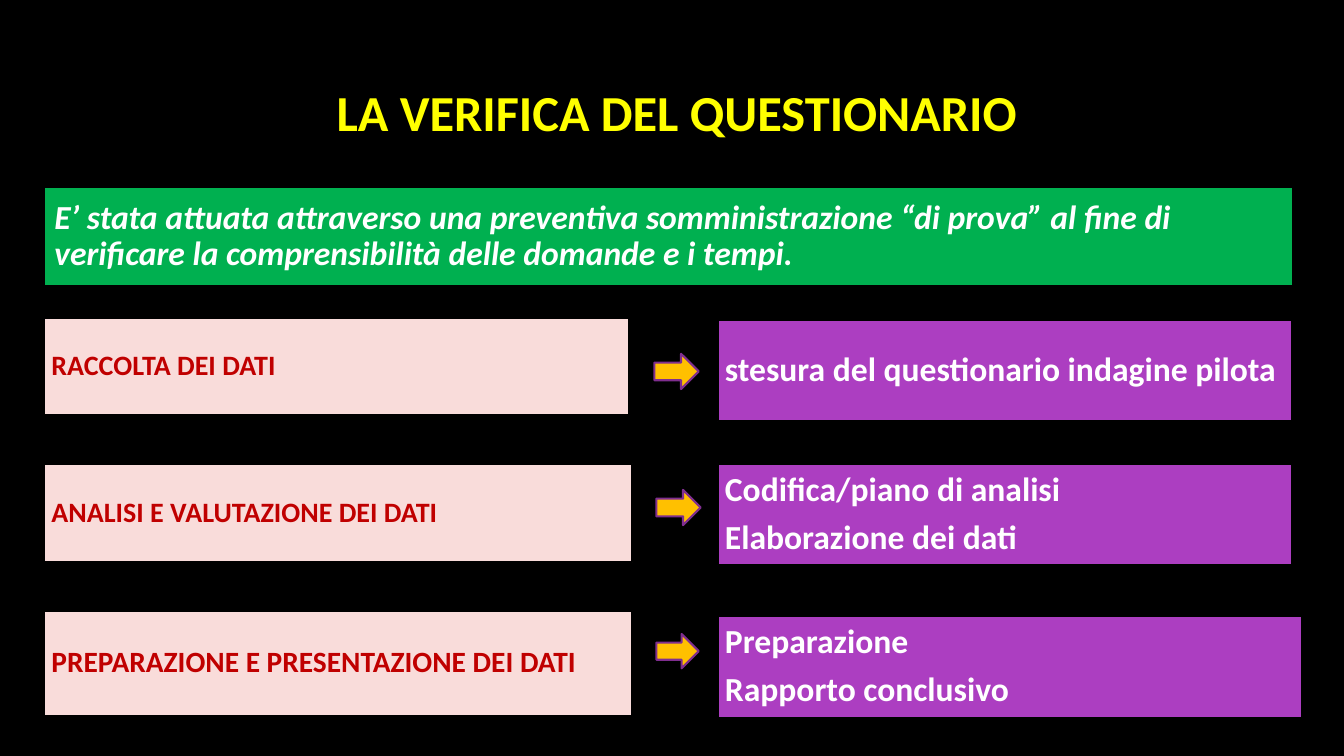
"""Build the slide on checking the questionnaire."""
from dataclasses import dataclass

from pptx import Presentation
from pptx.dml.color import RGBColor
from pptx.enum.shapes import MSO_SHAPE
from pptx.enum.text import MSO_ANCHOR, PP_ALIGN
from pptx.shapes.autoshape import Shape
from pptx.slide import Slide
from pptx.util import Inches, Pt

LEFT_EDGE = 0.44
RIGHT_COLUMN = 7.12
PINK, RED = "F9DCDA", "C00000"
PURPLE, WHITE = "AC3EC1", "FFFFFF"


@dataclass(frozen=True)
class Area:
    left: float
    top: float
    width: float
    height: float


@dataclass(frozen=True)
class Panel:
    area: Area
    lines: tuple[str, ...]
    fill: str
    color: str
    size: float = 24
    inset: float = 0.07
    italic: bool = False


INTRO = Panel(
    Area(LEFT_EDGE, 1.85, 12.38, 0.99),
    ("E’ stata attuata attraverso una preventiva somministrazione “di prova” "
     "al fine di verificare la comprensibilità delle domande e i tempi.",),
    "00B050", WHITE, inset=0.1, italic=True,
)


def phase(top: float, width: float, height: float, text: str, size: float) -> Panel:
    """Describe a phase in the left column."""
    return Panel(Area(LEFT_EDGE, top, width, height), (text,), PINK, RED, size)


def outcome(top: float, width: float, *lines: str) -> Panel:
    """Describe an outcome in the right column."""
    return Panel(Area(RIGHT_COLUMN, top, width, 1.01), lines, PURPLE, WHITE)


PANELS = (
    INTRO,
    phase(3.15, 5.8, 0.97, "RACCOLTA DEI DATI", 20),
    outcome(3.17, 5.7, "stesura del questionario indagine pilota"),
    phase(4.6, 5.83, 0.98, "ANALISI E VALUTAZIONE DEI DATI", 20),
    outcome(4.6, 5.7, "Codifica/piano di analisi", "Elaborazione dei dati"),
    phase(6.06, 5.83, 1.04, "PREPARAZIONE E PRESENTAZIONE DEI DATI", 21),
    outcome(6.11, 5.79, "Preparazione", "Rapporto conclusivo"),
)
ARROWS = (
    Area(6.49, 3.51, 0.44, 0.35),
    Area(6.51, 4.86, 0.44, 0.35),
    Area(6.51, 6.29, 0.42, 0.34),
)


def rgb(value: str) -> RGBColor:
    """Turn a hex string into a colour."""
    return RGBColor.from_string(value)


def lengths(area: Area) -> tuple[Inches, ...]:
    """Give the position and size of an area."""
    return tuple(map(Inches, (area.left, area.top, area.width, area.height)))


def write(box: Shape, lines: tuple[str, ...], size: float, color: str,
          inset: float, italic: bool = False) -> None:
    """Write bold, left-aligned lines in the middle of a box."""
    frame = box.text_frame
    frame.word_wrap = True
    frame.vertical_anchor = MSO_ANCHOR.MIDDLE
    frame.margin_left = frame.margin_right = Inches(inset)
    frame.margin_top = frame.margin_bottom = Inches(inset)
    frame.text = "\n".join(lines)
    for paragraph in frame.paragraphs:
        paragraph.alignment = PP_ALIGN.LEFT
        paragraph.line_spacing = 0.9
        paragraph.space_after = Pt(8)
        font = paragraph.font
        font.name, font.size = "Calibri", Pt(size)
        font.bold, font.italic = True, italic
        font.color.rgb = rgb(color)


def draw_shape(page: Slide, kind: MSO_SHAPE, area: Area, fill: str, line: str) -> Shape:
    """Draw a filled and outlined preset shape."""
    shape = page.shapes.add_shape(kind, *lengths(area))
    shape.shadow.inherit = False
    shape.fill.solid()
    shape.fill.fore_color.rgb = rgb(fill)
    shape.line.color.rgb = rgb(line)
    shape.line.width = Pt(1.5)
    return shape


def draw_panel(page: Slide, panel: Panel) -> None:
    """Draw a panel with its text."""
    box = draw_shape(page, MSO_SHAPE.RECTANGLE, panel.area, panel.fill, "000000")
    write(box, panel.lines, panel.size, panel.color, panel.inset, panel.italic)


def main() -> None:
    """Build and save the deck."""
    deck = Presentation()
    deck.slide_width, deck.slide_height = Inches(13.33), Inches(7.5)
    page = deck.slides.add_slide(deck.slide_layouts[6])
    page.background.fill.solid()
    page.background.fill.fore_color.rgb = rgb("000000")

    title = page.shapes.add_textbox(*lengths(Area(3.24, 0.44, 9.42, 1.41)))
    write(title, ("LA VERIFICA DEL QUESTIONARIO",), 36, "FFFF00", 0.1)
    for panel in PANELS:
        draw_panel(page, panel)
    for area in ARROWS:
        draw_shape(page, MSO_SHAPE.RIGHT_ARROW, area, "FFC000", "7F2E8F")
    deck.save("out.pptx")


if __name__ == "__main__":
    main()
